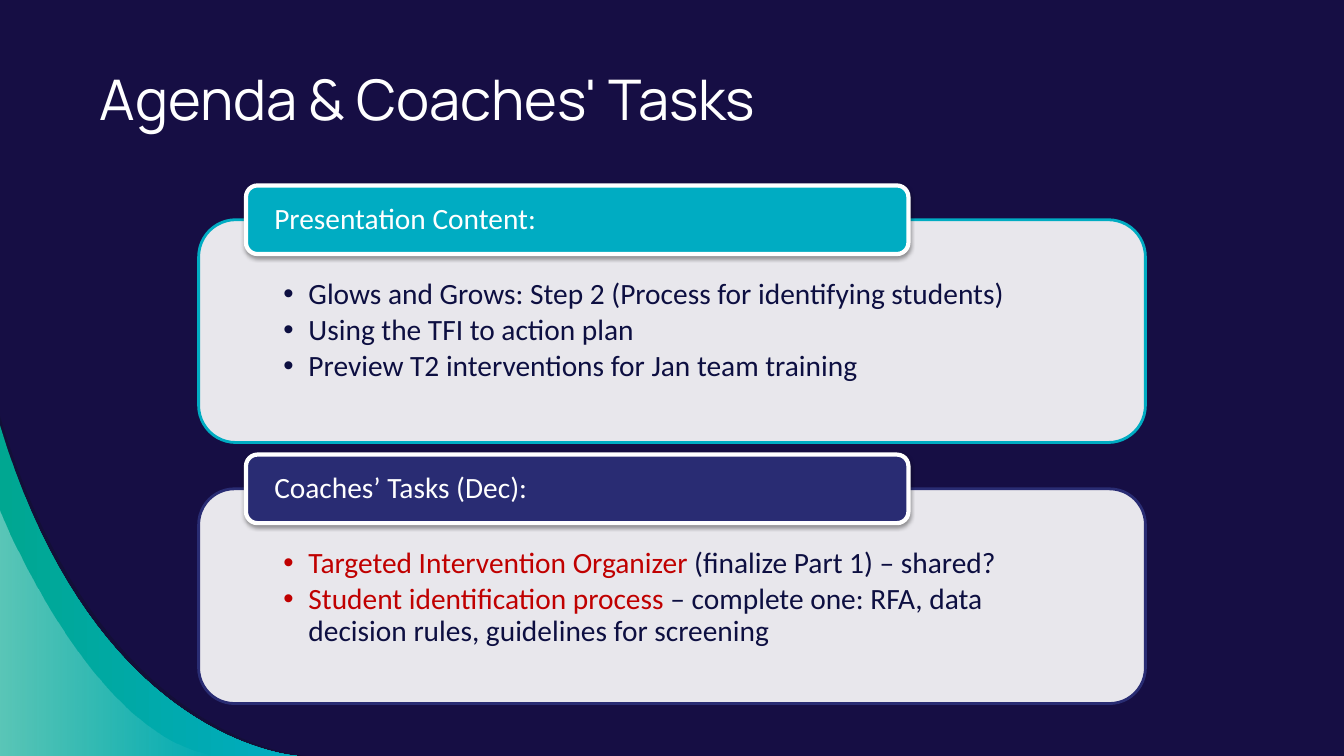
from dataclasses import dataclass

from lxml import etree
from pptx import Presentation
from pptx import util as u
from pptx.dml.color import RGBColor
from pptx.enum import shapes, text
from pptx.oxml import ns

NAVY, INK, RED, WHITE = "160E44", "0D0F41", "C00000", "FFFFFF"
TEAL, GREEN, INDIGO, SHADE = "00ACC2", "00A791", "292C73", "12102F"
Point = tuple[float, float]


@dataclass
class Span:
    words: str
    color: str = INK


@dataclass
class Card:
    top: float
    body_height: float
    color: str
    heading: str
    bullets: list[list[Span]]


@dataclass
class Swoosh:
    curve: tuple[Point, Point, Point, Point]
    stops: list[tuple[str, int]]  # colour and opacity, left to right


CARDS = [
    Card(1.84, 2.21, TEAL, "Presentation Content:", [
        [Span("Glows and Grows: Step 2 (Process for identifying students)")],
        [Span("Using the TFI to action plan")],
        [Span("Preview T2 interventions for Jan team training")],
    ]),
    Card(4.51, 2.13, INDIGO, "Coaches’ Tasks (Dec):", [
        [Span("Targeted Intervention Organizer ", RED),
         Span("(finalize Part 1) – shared?")],
        [Span("Student identification process ", RED),
         Span("– complete one: RFA, data decision rules, guidelines for screening")],
    ]),
]

SWOOSHES = [
    Swoosh(((0, 4.13), (0.98, 7.39), (3.03, 7.5), (3.03, 7.5)), [(SHADE, 54)]),
    Swoosh(((0, 4.22), (0.95, 7.39), (2.95, 7.5), (2.95, 7.5)),
           [(GREEN, 100), (TEAL, 100)]),
    Swoosh(((0, 5.06), (0, 5.06), (0.91, 7.35), (2.16, 7.5)),
           [(WHITE, 36), (WHITE, 0)]),
]


def rgb(color: str) -> RGBColor:
    return RGBColor.from_string(color)


def add_xml(parent, tag: str, **attributes):
    return etree.SubElement(parent, ns.qn(tag), attributes)


def set_opacity(shape, percents: list[int]) -> None:
    """Set the opacity of each fill colour, in order."""
    fill = shape._element.spPr.find(ns.qn("a:solidFill"))
    if fill is None:
        fill = shape._element.spPr.find(ns.qn("a:gradFill"))
    for color, percent in zip(fill.iter(ns.qn("a:srgbClr")), percents):
        if percent < 100:
            add_xml(color, "a:alpha", val=str(percent * 1000))


def add_swoosh(page, swoosh: Swoosh, steps: int = 40) -> None:
    points = []
    for step in range(steps + 1):
        t = step / steps
        weights = ((1 - t) ** 3, 3 * t * (1 - t) ** 2, 3 * t * t * (1 - t), t ** 3)
        points.append(tuple(
            u.Inches(sum(w * p[axis] for w, p in zip(weights, swoosh.curve)))
            for axis in (0, 1)))
    builder = page.shapes.build_freeform(*points[0])
    builder.add_line_segments(points[1:] + [(0, u.Inches(7.5))], close=True)
    shape = builder.convert_to_shape()
    shape.shadow.inherit = False
    shape.line.fill.background()
    if len(swoosh.stops) == 1:
        shape.fill.solid()
        shape.fill.fore_color.rgb = rgb(swoosh.stops[0][0])
    else:
        shape.fill.gradient()
        shape.fill.gradient_angle = 0
        for stop, (color, _) in zip(shape.fill.gradient_stops, swoosh.stops):
            stop.color.rgb = rgb(color)
    set_opacity(shape, [percent for _, percent in swoosh.stops])


def add_panel(page, at: tuple[float, ...], fill: str, line: str, width: float):
    panel = page.shapes.add_shape(
        shapes.MSO_SHAPE.ROUNDED_RECTANGLE, *map(u.Inches, at))
    panel.shadow.inherit = False
    panel.fill.solid()
    panel.fill.fore_color.rgb = rgb(fill)
    panel.line.color.rgb = rgb(line)
    panel.line.width = u.Pt(width)
    return panel


def add_shadow(shape) -> None:
    effects = shape._element.spPr.find(ns.qn("a:effectLst"))
    shadow = add_xml(effects, "a:outerShdw", blurRad=str(u.Pt(3.1)),
                     dist=str(u.Pt(1.6)), dir="5400000", rotWithShape="0")
    color = add_xml(shadow, "a:srgbClr", val="000000")
    add_xml(color, "a:alpha", val="38000")


def add_text(page, at: tuple[float, ...], insets: tuple[float, ...],
             lines: list[list[Span]], size: float = 21, font: str = "Calibri",
             bulleted: bool = False, spacing: float = 0.9) -> None:
    box = page.shapes.add_textbox(*map(u.Inches, at))
    frame = box.text_frame
    frame.word_wrap = True
    frame.vertical_anchor = (
        text.MSO_ANCHOR.TOP if bulleted else text.MSO_ANCHOR.MIDDLE)
    (frame.margin_left, frame.margin_top,
     frame.margin_right, frame.margin_bottom) = map(u.Inches, insets)
    for index, spans in enumerate(lines):
        para = frame.add_paragraph() if index else frame.paragraphs[0]
        para.line_spacing = spacing
        if bulleted:
            para.level = 1
            para.space_after = u.Pt(3)
            properties = para._p.get_or_add_pPr()
            properties.set("marL", str(u.Inches(0.25)))
            properties.set("indent", str(u.Inches(-0.25)))
            add_xml(properties, "a:buFont", typeface="Arial")
            add_xml(properties, "a:buChar", char="•")
        para.font.name = font
        para.font.size = u.Pt(size)
        for span in spans:
            run = para.add_run()
            run.text = span.words
            run.font.color.rgb = rgb(span.color)


def add_card(page, card: Card) -> None:
    # Body with its bullets
    left, top, width, height = 1.97, card.top + 0.34, 9.39, card.body_height
    body = add_panel(page, (left, top, width, height), WHITE, card.color, 2)
    set_opacity(body, [90])
    add_text(page, (left + 0.11, top + 0.11, width - 0.22, height - 0.22),
             (0.73, 0.48, 0.73, 0.16), card.bullets, bulleted=True)
    # Heading tab over the top edge
    tab = add_panel(page, (2.44, card.top, 6.57, 0.68), card.color, WHITE, 3)
    add_shadow(tab)
    add_text(page, (2.47, card.top + 0.04, 6.51, 0.61), (0.25, 0, 0.25, 0),
             [[Span(card.heading, WHITE)]])


def main() -> None:
    deck = Presentation()
    deck.slide_width, deck.slide_height = u.Inches(13.33), u.Inches(7.5)
    page = deck.slides.add_slide(deck.slide_layouts[6])
    page.background.fill.solid()
    page.background.fill.fore_color.rgb = rgb(NAVY)

    # Corner decoration
    for swoosh in SWOOSHES:
        add_swoosh(page, swoosh)
    # Agenda cards
    for card in CARDS:
        add_card(page, card)
    # Title
    add_text(page, (0.89, 0.51, 10.26, 0.92), (0.1, 0.1, 0.1, 0.1),
             [[Span("Agenda & Coaches' Tasks", WHITE)]],
             size=40, font="Manrope", spacing=1.0)

    deck.save("out.pptx")


if __name__ == "__main__":
    main()
